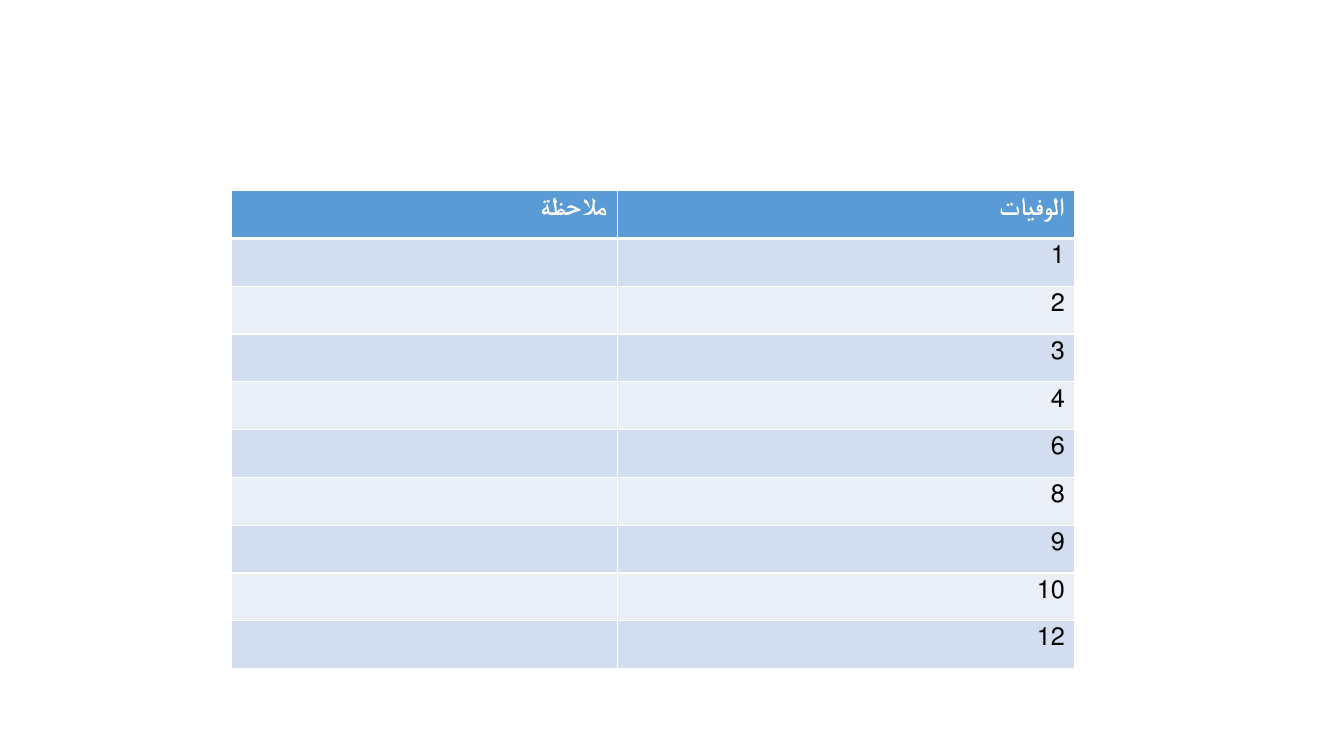
from lxml import etree
from pptx import Presentation
from pptx.dml.color import RGBColor
from pptx.enum import text
from pptx.oxml import ns
from pptx.util import Pt

HEADERS = ["ملاحظة", "الوفيات"]
DEATHS = ["1", "2", "3", "4", "6", "8", "9", "10", "12"]
COL_WIDTHS = [275.9, 326.8]
ROW_HEIGHT = 34.13
LEFT, TOP = 165.2, 136.2
HEADER_FILL = "5B9BD5"
BANDS = ["D2DEEF", "EAEFF7"]
WHITE, BLACK = "FFFFFF", "000000"


def rgb(value):
    return RGBColor.from_string(value)


def set_borders(cell, widths):
    """Draw white cell borders; widths maps each side to points."""
    tc_pr = cell._tc.get_or_add_tcPr()
    for side, width in widths.items():
        ln = etree.SubElement(tc_pr, ns.qn(f"a:ln{side}"), w=str(Pt(width)))
        fill = etree.SubElement(ln, ns.qn("a:solidFill"))
        etree.SubElement(fill, ns.qn("a:srgbClr"), val=WHITE)


def write_cell(cell, value, color, bold, rtl):
    p = cell.text_frame.paragraphs[0]
    p.alignment = text.PP_ALIGN.RIGHT
    if rtl:
        p._p.get_or_add_pPr().set("rtl", "1")
    r = p.add_run()
    r.text = value
    for name, setting in {"size": Pt(18), "name": "Calibri", "bold": bold}.items():
        setattr(r.font, name, setting)
    r.font.color.rgb = rgb(color)


def add_deaths_table(slide):
    rows = [HEADERS] + [["", number] for number in DEATHS]
    frame = slide.shapes.add_table(len(rows), len(HEADERS), Pt(LEFT), Pt(TOP),
                                   Pt(sum(COL_WIDTHS)), Pt(ROW_HEIGHT * len(rows)))
    table = frame.table
    for column, width in zip(table.columns, COL_WIDTHS):
        column.width = Pt(width)

    for i, values in enumerate(rows):
        table.rows[i].height = Pt(ROW_HEIGHT)
        header = i == 0
        # A thick rule separates the header from the banded rows
        widths = {"L": 1, "R": 1, "T": 3 if i == 1 else 1, "B": 3 if header else 1}
        for j, value in enumerate(values):
            cell = table.cell(i, j)
            set_borders(cell, widths)
            cell.fill.solid()
            cell.fill.fore_color.rgb = rgb(HEADER_FILL if header else BANDS[(i - 1) % 2])
            if value:
                write_cell(cell, value, WHITE if header else BLACK, header,
                           rtl=not header or j == 0)


def main():
    prs = Presentation()
    prs.slide_width, prs.slide_height = Pt(960), Pt(540)
    slide = prs.slides.add_slide(prs.slide_layouts[6])
    add_deaths_table(slide)
    prs.save("out.pptx")


if __name__ == "__main__":
    main()
